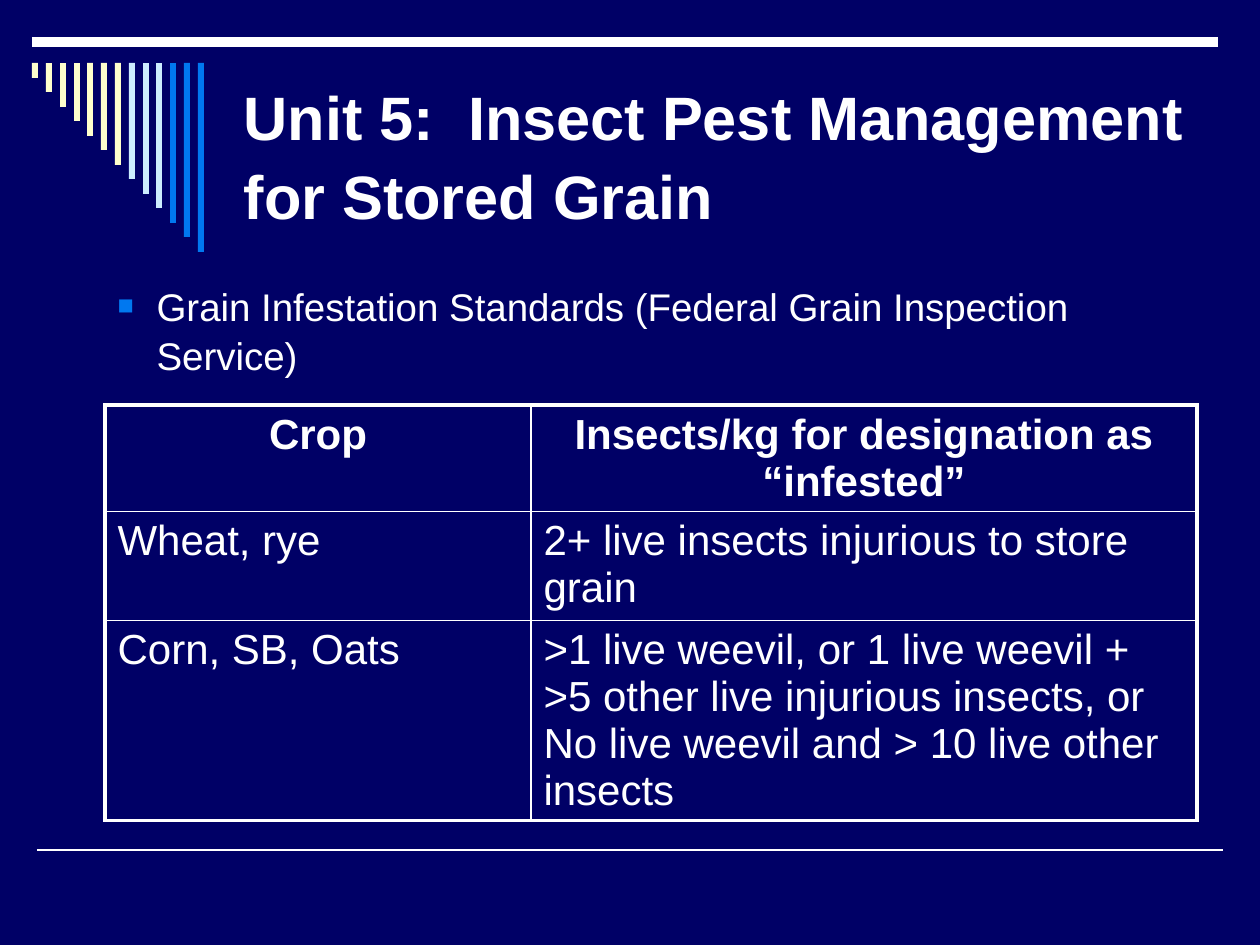
from dataclasses import dataclass

from lxml.etree import SubElement
from pptx import Presentation
from pptx.dml.color import RGBColor
from pptx.enum.shapes import MSO_CONNECTOR, MSO_SHAPE
from pptx.enum.text import MSO_ANCHOR, MSO_AUTO_SIZE, PP_ALIGN
from pptx.oxml import parse_xml
from pptx.oxml.ns import nsdecls, qn
from pptx.util import Emu, Pt

PX_PER_INCH = 126
FONT = "Arial"
NAVY, WHITE, BLUE = "000066", "FFFFFF", "0078F0"
BAR_COLORS = ["FFFFCC"] * 7 + ["CCECFF"] * 3 + [BLUE] * 3
COLUMNS = [426, 666]
ROWS = [106, 109, 200]
STANDARDS = [
    ("Crop", "Insects/kg for designation as “infested”"),
    ("Wheat, rye", "2+ live insects injurious to store grain"),
    ("Corn, SB, Oats", ">1 live weevil, or 1 live weevil + >5 other live injurious "
                       "insects, or No live weevil and > 10 live other insects"),
]


@dataclass(frozen=True)
class Rule:
    left: int
    right: int
    top: int
    weight: float


@dataclass(frozen=True)
class Bar:
    left: int
    height: int
    color: str


RULES = [Rule(37, 1223, 850, 1), Rule(32, 1218, 42, 6)]
BARS = [Bar(32 + round(index * 166 / 12), round((index + 1) * 189 / 13), color)
        for index, color in enumerate(BAR_COLORS)]


def px(length: int) -> Emu:
    return Emu(round(length * 914400 / PX_PER_INCH))


def rgb(color: str) -> RGBColor:
    return RGBColor.from_string(color)


def place(shape, left: int, top: int, width: int, height: int) -> None:
    shape.left, shape.top, shape.width, shape.height = map(px, (left, top, width, height))


def write(para, text: str, size: float, bold: bool = False) -> None:
    span = para.add_run()
    span.text = text
    span.font.name = FONT
    span.font.size = Pt(size)
    span.font.bold = bold
    span.font.color.rgb = rgb(WHITE)


def draw_rule(page, rule: Rule) -> None:
    line = page.shapes.add_connector(MSO_CONNECTOR.STRAIGHT, px(rule.left), px(rule.top),
                                     px(rule.right), px(rule.top))
    line.line.color.rgb = rgb(WHITE)
    line.line.width = Pt(rule.weight)
    SubElement(line.element.spPr, qn("a:effectLst"))


def draw_bar(page, bar: Bar) -> None:
    shape = page.shapes.add_shape(MSO_SHAPE.RECTANGLE, px(bar.left), px(63),
                                  px(6), px(bar.height))
    shape.shadow.inherit = False
    shape.fill.solid()
    shape.fill.fore_color.rgb = rgb(bar.color)
    shape.line.fill.background()


def add_square_bullet(para) -> None:
    properties = para._p.get_or_add_pPr()
    properties.set("marL", str(px(102)))
    properties.set("indent", str(-px(39)))
    color = SubElement(properties, qn("a:buClr"))
    SubElement(color, qn("a:srgbClr"), val=BLUE)
    SubElement(properties, qn("a:buSzPct"), val="70000")
    SubElement(properties, qn("a:buFont"), typeface=FONT)
    SubElement(properties, qn("a:buChar"), char="■")


def fill_title(title) -> None:
    place(title, 231, 63, 966, 179)
    frame = title.text_frame
    frame.auto_size = MSO_AUTO_SIZE.NONE
    frame.vertical_anchor = MSO_ANCHOR.MIDDLE
    frame.margin_right = 0
    para = frame.paragraphs[0]
    para.alignment = PP_ALIGN.LEFT
    para.line_spacing = 1.08
    write(para, "Unit 5:  Insect Pest Management for Stored Grain", 35, bold=True)


def fill_body(body) -> None:
    place(body, 42, 273, 1176, 567)
    frame = body.text_frame
    frame.auto_size = MSO_AUTO_SIZE.NONE
    para = frame.paragraphs[0]
    para.level = 1
    add_square_bullet(para)
    para.space_before = Pt(0)
    para.line_spacing = 1.07
    write(para, "Grain Infestation Standards (Federal Grain Inspection Service)", 22)


def set_borders(cell, row: int, column: int) -> None:
    """Draw thick edges around the table and thin ones inside it."""
    outer = {"L": column == 0, "R": column == len(COLUMNS) - 1,
             "T": row == 0, "B": row == len(ROWS) - 1}
    properties = cell._tc.get_or_add_tcPr()
    for index, (side, is_outer) in enumerate(outer.items()):
        width = Pt(2.25 if is_outer else 1)
        properties.insert(index, parse_xml(
            f'<a:ln{side} {nsdecls("a")} w="{width}"><a:solidFill>'
            f'<a:srgbClr val="{WHITE}"/></a:solidFill></a:ln{side}>'))


def draw_table(page) -> None:
    table = page.shapes.add_table(len(ROWS), len(COLUMNS), px(105), px(405),
                                  px(sum(COLUMNS)), px(sum(ROWS))).table
    table.first_row = table.horz_banding = False
    for column, width in zip(table.columns, COLUMNS):
        column.width = px(width)
    for row, height in zip(table.rows, ROWS):
        row.height = px(height)
    for row, texts in enumerate(STANDARDS):
        for column, text in enumerate(texts):
            cell = table.cell(row, column)
            cell.fill.background()
            set_borders(cell, row, column)
            para = cell.text_frame.paragraphs[0]
            para.alignment = PP_ALIGN.CENTER if row == 0 else PP_ALIGN.LEFT
            write(para, text, 24, bold=row == 0)


def main() -> None:
    deck = Presentation()
    deck.slide_width, deck.slide_height = px(1260), px(945)
    page = deck.slides.add_slide(deck.slide_layouts[1])
    page.background.fill.solid()
    page.background.fill.fore_color.rgb = rgb(NAVY)
    for rule in RULES:
        draw_rule(page, rule)
    for bar in BARS:
        draw_bar(page, bar)
    fill_title(page.shapes.title)
    fill_body(page.placeholders[1])
    draw_table(page)
    deck.save("out.pptx")


if __name__ == "__main__":
    main()
